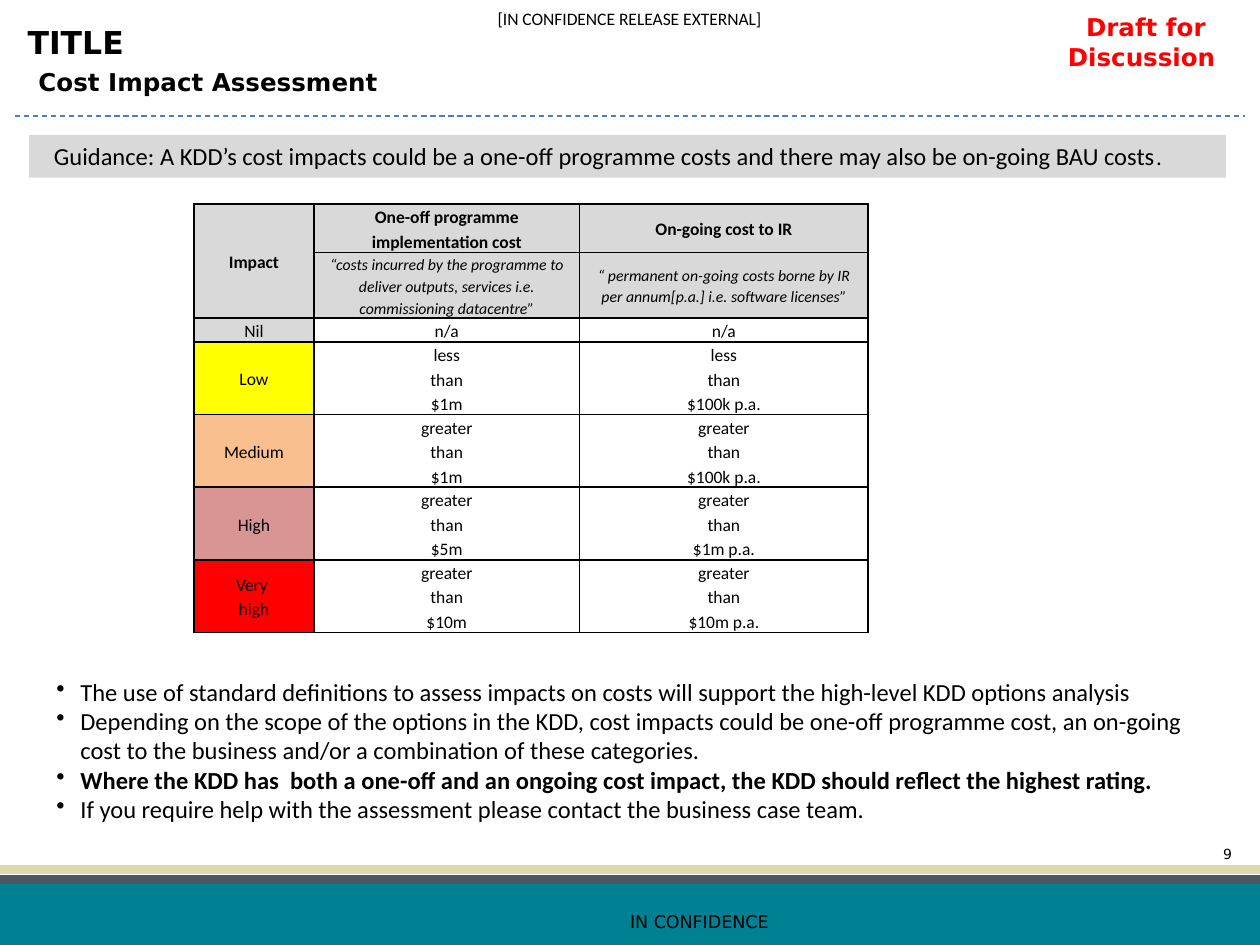
"""Build the cost impact assessment slide."""
from dataclasses import dataclass

from lxml import etree
from pptx import Presentation
from pptx.dml.color import RGBColor
from pptx.enum.dml import MSO_LINE
from pptx.enum.shapes import MSO_CONNECTOR, MSO_SHAPE
from pptx.enum.text import MSO_ANCHOR, PP_ALIGN
from pptx.oxml.ns import qn
from pptx.util import Inches, Pt

LEFT, CENTER = PP_ALIGN.LEFT, PP_ALIGN.CENTER
TOP, MIDDLE = MSO_ANCHOR.TOP, MSO_ANCHOR.MIDDLE
STRAIGHT, RECT, DASH = MSO_CONNECTOR.STRAIGHT, MSO_SHAPE.RECTANGLE, MSO_LINE.DASH


@dataclass(frozen=True)
class Theme:
    body: str = "Calibri"
    head: str = "DejaVu Sans"
    black: str = "000000"
    alert: str = "FF0000"
    teal: str = "008093"
    slate: str = "4C575F"
    sand: str = "DFD8AD"
    rule: str = "4B7EBC"
    grey: str = "D9D9D9"
    low: str = "FFFF00"
    medium: str = "FABF8F"
    high: str = "D99594"
    title: int = 18
    text: int = 14
    stop: int = 13
    small: int = 10
    note: int = 9
    number: int = 8


T = Theme()

BULLETS = [
    ("The use of standard definitions to assess impacts on costs will support "
     "the high-level KDD options analysis", False),
    ("Depending on the scope of the options in the KDD, cost impacts could be one-off "
     "programme cost, an on-going cost to the business and/or a combination of these "
     "categories.", False),
    ("Where the KDD has  both a one-off and an ongoing cost impact, the KDD should "
     "reflect the highest rating.", True),
    ("If you require help with the assessment please contact the business case team.", False),
]
HEADINGS = ["Impact", "One-off programme implementation cost", "On-going cost to IR"]
NOTES = [
    "“costs incurred by the programme to deliver outputs, services i.e. "
    "commissioning datacentre”",
    "“ permanent on-going costs borne by IR per annum[p.a.] i.e. software licenses”",
]
RATINGS = [
    ("Nil", T.grey, "n/a", "n/a"),
    ("Low", T.low, "less\nthan\n$1m", "less\nthan\n$100k p.a."),
    ("Medium", T.medium, "greater\nthan\n$1m", "greater\nthan\n$100k p.a."),
    ("High", T.high, "greater\nthan\n$5m", "greater\nthan\n$1m p.a."),
    ("Very \nhigh", T.alert, "greater\nthan\n$10m", "greater\nthan\n$10m p.a."),
]
COL_WIDTHS = [0.95, 2.11, 2.29]
ROW_HEIGHTS = [0.38, 0.52, 0.19] + [0.57] * 4


def add_run(p, text, color=T.black, **fmt):
    r = p.add_run()
    r.text = text
    for name, value in fmt.items():
        setattr(r.font, name, value)
    r.font.color.rgb = RGBColor.from_string(color)


def set_indent(p, left, first=0, bullet=None):
    pPr = p._p.get_or_add_pPr()
    pPr.set("marL", str(Inches(left)))
    pPr.set("indent", str(Inches(first)))
    if bullet:
        etree.SubElement(pPr, qn("a:buChar")).set("char", bullet)


def add_text(s, box, lines, align=LEFT, anchor=TOP, inset=None):
    """Add a text box whose lines are lists of (text, format) runs."""
    tf = s.shapes.add_textbox(*map(Inches, box)).text_frame
    tf.word_wrap = True
    tf.vertical_anchor = anchor
    if inset is not None:
        for side in ("left", "top", "right", "bottom"):
            setattr(tf, f"margin_{side}", Inches(inset))
    for i, runs in enumerate(lines):
        p = tf.add_paragraph() if i else tf.paragraphs[0]
        p.alignment = align
        for text, fmt in runs:
            add_run(p, text, **fmt)
    return tf


def add_bar(s, box, color):
    sp = s.shapes.add_shape(RECT, *map(Inches, box))
    sp.shadow.inherit = False
    sp.fill.solid()
    sp.fill.fore_color.rgb = RGBColor.from_string(color)
    sp.line.fill.background()
    return sp


def add_rule(s, x1, x2, y, color, width, dash=None):
    ln = s.shapes.add_connector(STRAIGHT, *map(Inches, (x1, y, x2, y)))
    ln.line.color.rgb = RGBColor.from_string(color)
    ln.line.width = Pt(width)
    ln.line.dash_style = dash
    etree.SubElement(ln._element.spPr, qn("a:effectLst"))


def set_borders(cell):
    tcPr = cell._tc.get_or_add_tcPr()
    for side in ("lnL", "lnR", "lnT", "lnB"):
        ln = etree.SubElement(tcPr, qn(f"a:{side}"), w=str(Pt(1)))
        fill = etree.SubElement(ln, qn("a:solidFill"))
        etree.SubElement(fill, qn("a:srgbClr"), val=T.black)


def fill_cell(cell, text, color=None, anchor=MIDDLE, size=T.small, **fmt):
    layout = {"margin_left": Inches(0.07), "margin_right": Inches(0.07),
              "margin_top": 0, "margin_bottom": 0, "vertical_anchor": anchor}
    for name, value in layout.items():
        setattr(cell, name, value)
    if color:
        cell.fill.solid()
        cell.fill.fore_color.rgb = RGBColor.from_string(color)
    else:
        cell.fill.background()
    tf = cell.text_frame
    for i, line in enumerate(text.split("\n")):
        p = tf.add_paragraph() if i else tf.paragraphs[0]
        p.alignment, p.line_spacing = CENTER, 1.15
        add_run(p, line, name=T.body, size=Pt(size), **fmt)


def add_cost_table(s):
    box = (1.54, 1.62, sum(COL_WIDTHS), sum(ROW_HEIGHTS))
    table = s.shapes.add_table(len(ROW_HEIGHTS), len(COL_WIDTHS), *map(Inches, box)).table
    table.first_row = table.horz_banding = False
    for col, width in zip(table.columns, COL_WIDTHS):
        col.width = Inches(width)
    for row, height in zip(table.rows, ROW_HEIGHTS):
        row.height = Inches(height)
    for cell in table.iter_cells():
        set_borders(cell)
    table.cell(0, 0).merge(table.cell(1, 0))
    for c, heading in enumerate(HEADINGS):
        fill_cell(table.cell(0, c), heading, T.grey, bold=True)
    for c, note in enumerate(NOTES, 1):
        fill_cell(table.cell(1, c), note, T.grey, size=T.note, italic=True)
    for r, (rating, color, *costs) in enumerate(RATINGS, 2):
        fill_cell(table.cell(r, 0), rating, color)
        for c, cost in enumerate(costs, 1):
            fill_cell(table.cell(r, c), cost, anchor=TOP)


def add_guidance(s):
    tf = add_bar(s, (0.23, 1.07, 9.5, 0.34), T.grey).text_frame
    tf.word_wrap, tf.vertical_anchor = True, TOP
    p = tf.paragraphs[0]
    p.alignment, p.space_after = LEFT, Pt(6)
    set_indent(p, 0.1)
    add_run(p, "Guidance: A KDD’s cost impacts could be a one-off programme costs and "
            "there may also be on-going BAU costs", name=T.body, size=Pt(T.text))
    add_run(p, ".", name=T.body, size=Pt(T.stop))


def add_frame(s):
    add_bar(s, (0, 6.98, 10, 0.52), T.teal)
    add_rule(s, 0, 10, 6.98, T.slate, 5)
    add_rule(s, 0, 10, 6.9, T.sand, 5)
    small = {"name": T.head, "size": Pt(T.small)}
    add_text(s, (9.61, 6.66, 0.39, 0.24), [[("9", {**small, "size": Pt(T.number)})]])
    add_text(s, (2.95, 7.18, 5.2, 0.27), [[("IN CONFIDENCE", small)]], CENTER)
    add_text(s, (3.77, 0, 2.45, 0.29),
             [[("[IN CONFIDENCE RELEASE EXTERNAL]", {**small, "name": T.body})]],
             CENTER, MIDDLE, 0)


def add_heading(s):
    add_rule(s, 0.12, 9.88, 0.92, T.rule, 0.75, DASH)
    title = {"name": T.head, "size": Pt(T.title), "bold": True}
    sub = {**title, "size": Pt(T.text)}
    add_text(s, (0.12, 0.13, 9.69, 0.71),
             [[("TITLE", title)], [(" ", title), ("Cost Impact Assessment", sub)]])
    add_text(s, (8.23, 0.05, 1.73, 0.57),
             [[("Draft for Discussion ", {**sub, "color": T.alert})]], CENTER)


def add_bullets(s):
    lines = [[(text, {"name": T.body, "size": Pt(T.text), "bold": bold})]
             for text, bold in BULLETS]
    for p in add_text(s, (0.35, 5.32, 9.5, 1.28), lines).paragraphs:
        set_indent(p, 0.19, -0.19, "•")


def main():
    prs = Presentation()
    prs.slide_width, prs.slide_height = Inches(10), Inches(7.5)
    s = prs.slides.add_slide(prs.slide_layouts[6])
    for add_part in (add_frame, add_heading, add_guidance, add_bullets, add_cost_table):
        add_part(s)
    prs.save("out.pptx")


if __name__ == "__main__":
    main()
